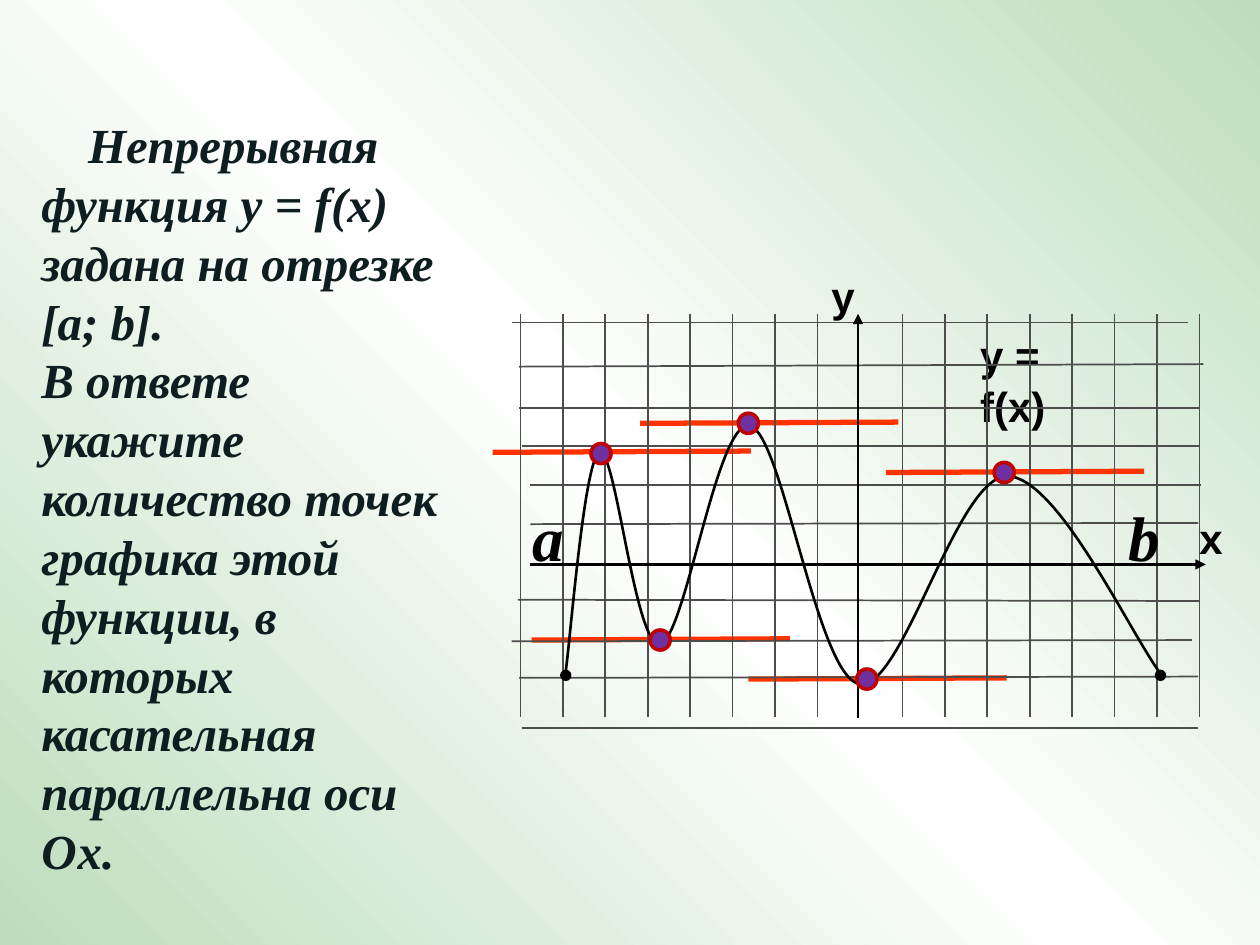
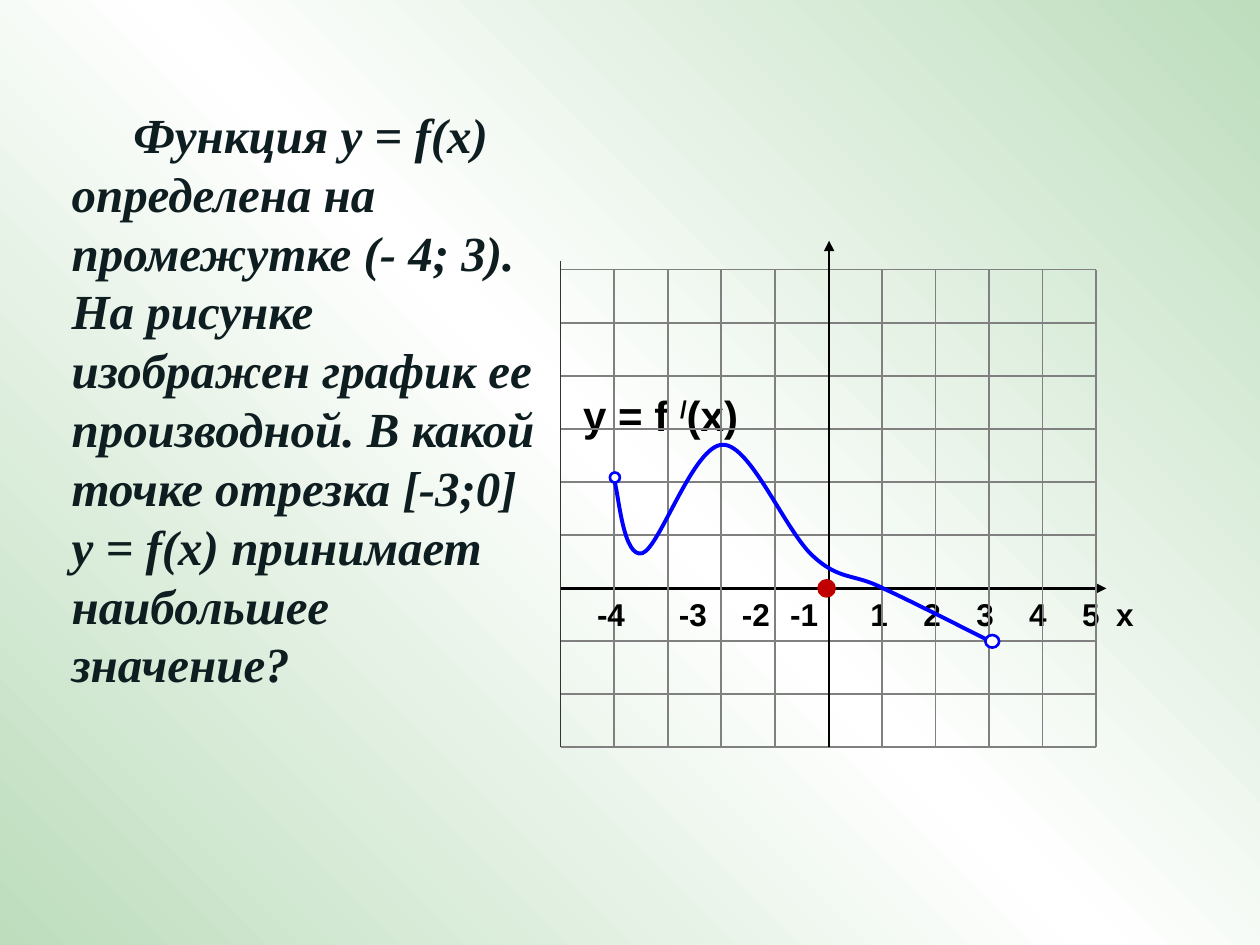
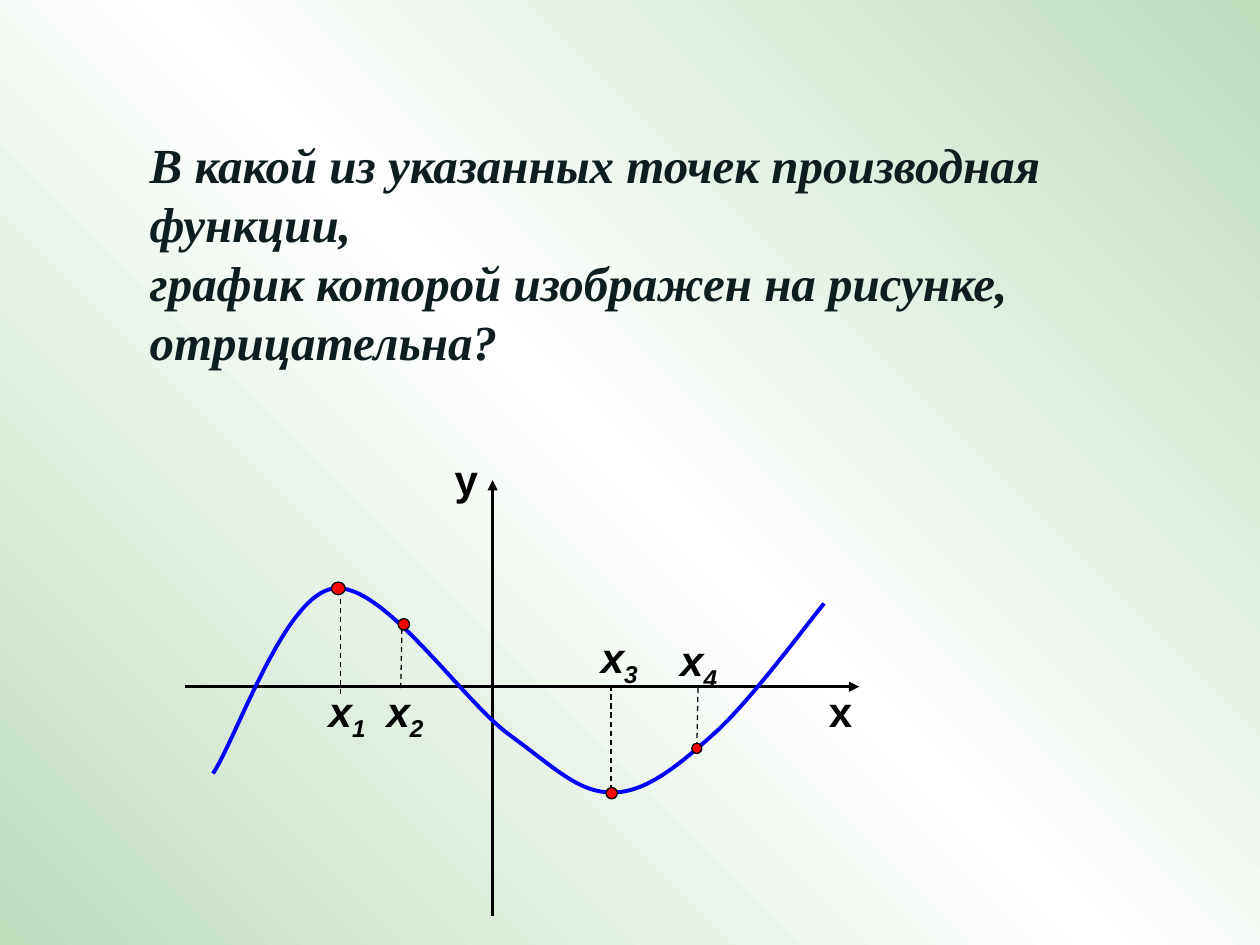
import copy

import pptx
import pptx.dml.color
import pptx.enum.dml
import pptx.enum.shapes
import pptx.enum.text
import pptx.oxml
import pptx.oxml.ns
import pptx.util
from pptx.util import Inches

COLORS = {
    "edge": "BDDDBD", "white": "FFFFFF", "ink": "0E1E20", "black": "000000",
    "dark": "4D4D4D", "gray": "808080", "side": "333333", "tangent": "FF3300",
    "blue": "0000FF", "purple": "7030A0", "crimson": "C00000", "red": "FF0000",
}
SERIF, SANS = "Times New Roman", "Arial"


def rgb(name):
    return pptx.dml.color.RGBColor.from_string(COLORS[name])


class Deck:
    """Holds the shared style and the current slide."""

    def __init__(self):
        self.show = pptx.Presentation()
        self.show.slide_width = Inches(10)
        self.show.slide_height = Inches(7.5)
        self.slide = None
        self.back()

    def back(self):
        """Diagonal green and white gradient on the master."""
        master = self.show.slide_master
        fill = master.background.fill
        fill.gradient()
        fill.gradient_angle = 45
        first = master.element.find(".//" + pptx.oxml.ns.qn("a:gs"))
        first.addnext(copy.deepcopy(first))
        stops = zip(fill.gradient_stops, ("edge", "white", "edge"), (0, 0.5, 1))
        for stop, color, place in stops:
            stop.color.rgb = rgb(color)
            stop.position = place

    def page(self):
        self.slide = self.show.slides.add_slide(self.show.slide_layouts[6])

    def text(self, box, paras, font, size, color="black", italic=False,
             wrap=False, indent=0, tabs=()):
        """Each paragraph is a list of (text, baseline percent) runs."""
        shape = self.slide.shapes.add_textbox(*map(Inches, box))
        frame = shape.text_frame
        frame.word_wrap = wrap
        frame.auto_size = pptx.enum.text.MSO_AUTO_SIZE.SHAPE_TO_FIT_TEXT
        for i, runs in enumerate(paras):
            para = frame.add_paragraph() if i else frame.paragraphs[0]
            props = para._p.get_or_add_pPr()
            if indent and i == 0:
                props.set("indent", str(Inches(indent)))
            if tabs:
                stops = pptx.oxml.parse_xml(
                    f"<a:tabLst {pptx.oxml.ns.nsdecls('a')}>"
                    + "".join(f'<a:tab pos="{Inches(t)}" algn="l"/>' for t in tabs)
                    + "</a:tabLst>")
                props.append(stops)
            for words, base in runs:
                run = para.add_run()
                run.text = words
                run.font.name = font
                run.font.size = pptx.util.Pt(size)
                run.font.bold = True
                run.font.italic = italic
                run.font.color.rgb = rgb(color)
                if base:
                    run._r.get_or_add_rPr().set("baseline", str(base * 1000))

    def task(self, box, paras, indent=0):
        """Problem statement."""
        self.text(box, [[(words, 0)] for words in paras], SERIF, 28, "ink",
                  italic=True, wrap=True, indent=indent)

    def label(self, left, top, words, width=0.39, sub="", italic=False):
        runs = [(words, 0)] + ([(sub, -25)] if sub else [])
        self.text((left, top, width, 0.5), [runs], SANS, 24, italic=italic)

    def line(self, ends, color, width, arrow=False, dash=False):
        kind = pptx.enum.shapes.MSO_CONNECTOR.STRAIGHT
        link = self.slide.shapes.add_connector(kind, *map(Inches, ends))
        link.line.color.rgb = rgb(color)
        link.line.width = pptx.util.Pt(width)
        if dash:
            link.line.dash_style = pptx.enum.dml.MSO_LINE.DASH
        space = pptx.oxml.ns.nsdecls("a")
        if arrow:
            tip = pptx.oxml.parse_xml(f'<a:tailEnd {space} type="triangle"/>')
            link.line._get_or_add_ln().append(tip)
        link._element.spPr.append(pptx.oxml.parse_xml(f"<a:effectLst {space}/>"))

    def axis(self, *ends):
        self.line(ends, "black", 1.5, arrow=True)

    def curve(self, points, color, width):
        """Bezier curve: a start, then two handles and an end per arc."""
        spots = [(Inches(x), Inches(y)) for x, y in points]
        build = self.slide.shapes.build_freeform(*spots[0])
        build.add_line_segments(spots[1:], close=False)
        shape = build.convert_to_shape()
        qn = pptx.oxml.ns.qn
        legs = list(shape._element.iter(qn("a:lnTo")))
        for i in range(0, len(legs), 3):
            arc = pptx.oxml.parse_xml(
                f"<a:cubicBezTo {pptx.oxml.ns.nsdecls('a')}/>")
            legs[i].addprevious(arc)
            for leg in legs[i:i + 3]:
                arc.append(leg.find(qn("a:pt")))
                leg.getparent().remove(leg)
        shape.shadow.inherit = False
        shape.fill.background()
        shape.line.color.rgb = rgb(color)
        shape.line.width = pptx.util.Pt(width)

    def dot(self, left, top, wide, high, fill, edge, width):
        shape = self.slide.shapes.add_shape(
            pptx.enum.shapes.MSO_SHAPE.OVAL, *map(Inches, (left, top, wide, high)))
        shape.shadow.inherit = False
        shape.fill.solid()
        shape.fill.fore_color.rgb = rgb(fill)
        shape.line.color.rgb = rgb(edge)
        shape.line.width = pptx.util.Pt(width)


def tangents(deck):
    deck.page()
    # Horizontal tangents
    for left, y in ((4.22, 5.08), (5.94, 5.39), (7.03, 3.75), (5.08, 3.36),
                    (3.91, 3.59)):
        deck.line((left, y, left + 2.05, y - 0.01), "tangent", 3)
    deck.task((0.23, 0.86, 3.55, 6.23), (
        "Непрерывная функция у = f(x) задана на отрезке [a; b].",
        "В ответе укажите количество точек графика этой функции, "
        "в которых касательная параллельна оси Ох."), indent=0.37)
    deck.label(7.68, 2.57, "y = f(x)", 1.28)
    # Grid and axes
    rows = ((4.06, 2.56, 9.43, 2.56), (4.12, 2.91, 9.55, 2.89),
            (4.12, 3.24, 9.52, 3.24), (4.14, 3.54, 9.52, 3.54),
            (4.21, 3.85, 9.53, 3.85), (4.21, 4.16, 9.51, 4.15),
            (4.11, 4.76, 9.52, 4.77), (4.06, 5.09, 9.46, 5.08),
            (4.12, 5.38, 9.51, 5.37), (4.14, 5.78, 9.51, 5.78))
    for row in rows:
        deck.line(row, "dark", 1)
    step = (9.52 - 4.13) / 16
    for i in range(17):
        if i != 8:
            x = 4.13 + i * step
            deck.line((x, 2.49, x, 5.69), "dark", 1)
    deck.axis(4.21, 4.48, 9.57, 4.48)
    deck.axis(6.81, 5.7, 6.81, 2.49)
    deck.label(6.5, 2.1, "y")
    deck.label(9.42, 4.02, "x")
    # Graph with its ends and extrema
    deck.curve(((4.49, 5.33), (4.53, 5.04), (4.64, 3.63), (4.76, 3.59),
                (4.89, 3.56), (5.04, 5.15), (5.24, 5.11),
                (5.44, 5.07), (5.69, 3.32), (5.95, 3.38),
                (6.21, 3.43), (6.48, 5.36), (6.82, 5.43),
                (7.16, 5.49), (7.59, 3.79), (7.99, 3.78),
                (8.39, 3.77), (8.97, 5.03), (9.22, 5.36)), "black", 1.5)
    for left, name in ((4.13, "a"), (8.86, "b")):
        deck.text((left, 3.91, 0.45, 0.7), [[(name, 0)]], SERIF, 36, italic=True)
    for left in (4.45, 9.17):
        deck.dot(left, 5.32, 0.08, 0.08, "black", "black", 0.75)
    for left, top in ((4.69, 3.52), (5.86, 3.28), (6.8, 5.31), (7.89, 3.67),
                      (5.16, 5)):
        deck.dot(left, top, 0.16, 0.16, "purple", "crimson", 2)


def slope(deck):
    deck.page()
    deck.text((4.53, 3.04, 1.44, 0.5), [[("y = f ", 0), ("/", 30), ("(x)", 0)]],
              SANS, 24)
    deck.text((6.81, 4.67, 2.43, 0.4), [[("1\t2\t3\t4\t5\tх", 0)]], SANS, 18,
              wrap=True, tabs=(0.42, 0.84, 1.26, 1.68, 1.95))
    # Grid and axes
    left, top, right, low = 4.45, 2.14, 8.7, 5.93
    deck.axis(left, 4.67, 8.78, 4.67)
    for i in range(10):
        if i != 6:
            y = top + i * (low - top) / 9
            deck.line((left, y, right, y), "gray", 1)
    for i in range(1, 11):
        if i != 5:
            x = left + i * (right - left) / 10
            deck.line((x, top, x, low), "gray", 1)
    deck.axis(6.58, low, 6.58, 1.91)
    deck.line((left, low, left, 2.07), "side", 0.75)
    deck.text((4.29, 4.67, 2.43, 0.4), [[("-4\t-3\t-2\t-1", 0)]], SANS, 18,
              wrap=True, indent=0.35, tabs=(0.78, 1.14, 1.57))
    # Graph of the derivative
    deck.curve(((4.88, 3.83), (4.91, 3.93), (4.95, 4.44), (5.1, 4.39),
                (5.24, 4.34), (5.51, 3.52), (5.74, 3.53),
                (5.96, 3.53), (6.24, 4.23), (6.46, 4.42),
                (6.67, 4.61), (6.78, 4.55), (7.01, 4.67),
                (7.25, 4.78), (7.7, 5.01), (7.88, 5.1)), "blue", 2.25)
    deck.task((0.47, 0.78, 3.91, 4.81), (
        "Функция у = f(x) определена на промежутке (- 4; 3). На рисунке "
        "изображен график ее производной. В какой точке отрезка [-3;0]",
        "у = f(x) принимает наибольшее значение?"), indent=0.49)
    deck.dot(4.84, 3.75, 0.08, 0.08, "white", "blue", 1.5)
    deck.dot(7.82, 5.04, 0.11, 0.1, "white", "blue", 1.5)
    deck.dot(6.5, 4.61, 0.12, 0.12, "crimson", "crimson", 2)


def signs(deck):
    deck.page()
    # Axes
    deck.axis(1.47, 5.45, 6.82, 5.45)
    deck.axis(3.91, 7.27, 3.91, 3.81)
    deck.task((1.09, 1.02, 8.67, 1.99), (
        "В какой из указанных точек производная функции,",
        "график которой изображен на рисунке, отрицательна?"))
    deck.curve(((6.54, 4.79), (6.4, 4.96), (5.95, 5.57), (5.67, 5.82),
                (5.39, 6.07), (5.13, 6.29), (4.86, 6.29),
                (4.59, 6.29), (4.41, 6.1), (4.04, 5.83),
                (3.67, 5.56), (3.04, 4.62), (2.65, 4.67),
                (2.26, 4.72), (1.89, 5.83), (1.69, 6.14)), "blue", 2.25)
    deck.label(6.48, 5.39, "х")
    deck.label(3.51, 3.55, "у")
    # Marked points: label place, dashed drop, dot
    marks = (("1", (2.51, 5.39), (2.7, 4.68, 2.7, 5.51), (2.63, 4.62, 0.11, 0.1)),
             ("2", (2.97, 5.39), (3.19, 4.99, 3.18, 5.49), (3.16, 4.91, 0.09, 0.09)),
             ("3", (4.67, 4.96), (4.85, 5.44, 4.85, 6.28), (4.81, 6.25, 0.09, 0.09)),
             ("4", (5.3, 4.99), (5.54, 5.46, 5.53, 5.96), (5.49, 5.9, 0.08, 0.08)))
    for sub, place, drop, spot in marks:
        deck.label(*place, "х", 0.51, sub, italic=True)
        deck.line(drop, "black", 0.75, dash=True)
        deck.dot(*spot, "red", "black", 0.75)


def main():
    deck = Deck()
    tangents(deck)
    slope(deck)
    signs(deck)
    deck.show.save("out.pptx")


if __name__ == "__main__":
    main()
